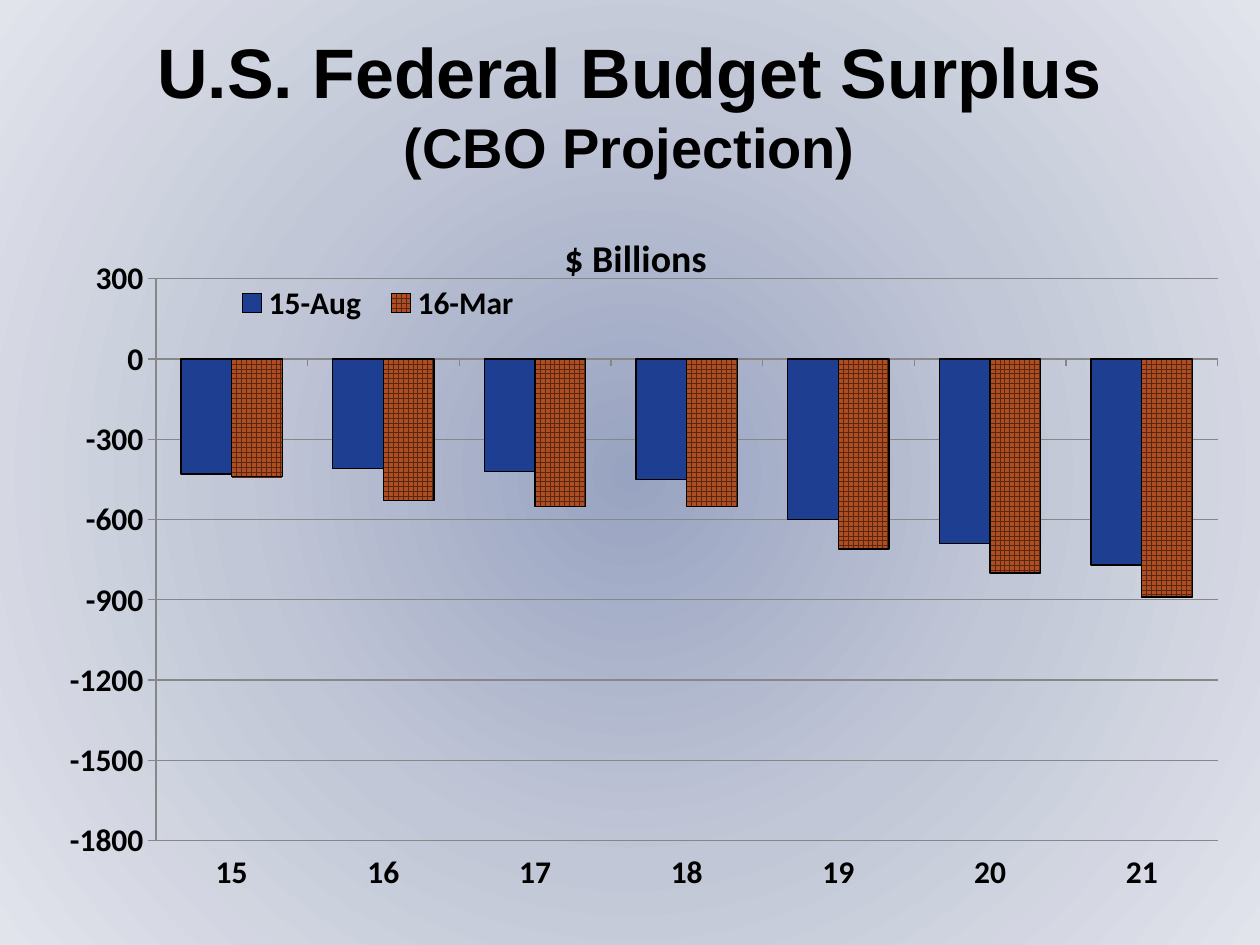
from dataclasses import dataclass

from lxml.etree import SubElement
from pptx import Presentation
from pptx.chart.data import CategoryChartData
from pptx.dml.color import RGBColor
from pptx.enum.chart import XL_CHART_TYPE, XL_LEGEND_POSITION, XL_TICK_LABEL_POSITION, XL_TICK_MARK
from pptx.enum.dml import MSO_PATTERN
from pptx.enum.text import MSO_ANCHOR, MSO_AUTO_SIZE, PP_ALIGN
from pptx.oxml import parse_xml
from pptx.oxml.ns import nsdecls, qn
from pptx.util import Inches, Pt

HUES = {
    "ink": "000000", "axis": "878787", "blue": "1E3E92",
    "rust": "AE4E22", "grid": "572711",
    "core": "98A3C1", "mid": "C2C7D7", "rim": "E1E4EB",
}


@dataclass
class Line:
    text: str
    size: int


@dataclass
class Series:
    name: str
    values: tuple
    hue: str
    mesh: str = ""


LINES = [Line("U.S. Federal Budget Surplus", 40), Line("(CBO Projection)", 32)]
YEARS = [str(year) for year in range(15, 22)]
SERIES = [
    Series("15-Aug", (-430, -410, -420, -450, -600, -690, -770), "blue"),
    Series("16-Mar", (-440, -530, -550, -550, -710, -800, -890), "rust", "grid"),
]


def tint(name: str) -> RGBColor:
    return RGBColor.from_string(HUES[name])


def style(font, size: float, face: str) -> None:
    font.size, font.name, font.bold = Pt(size), face, True
    font.color.rgb = tint("ink")


def backdrop(slide) -> None:
    fill = slide.background.fill
    fill.gradient()
    stops = "".join(
        f'<a:gs pos="{pos}"><a:srgbClr val="{HUES[name]}"/></a:gs>'
        for pos, name in ((0, "core"), (50000, "mid"), (100000, "rim"))
    )
    glow = parse_xml(
        f'<a:gradFill {nsdecls("a")} rotWithShape="1"><a:gsLst>{stops}</a:gsLst>'
        '<a:path path="circle"><a:fillToRect l="50000" t="50000" r="50000" b="50000"/>'
        "</a:path></a:gradFill>"
    )
    old = next(slide.element.iter(qn("a:gradFill")))
    old.getparent().replace(old, glow)


def heading(title, lines: list[Line]) -> None:
    title.left, title.top = Inches(0.25), Inches(0.33)
    title.width, title.height = Inches(9.49), Inches(1)
    frame = title.text_frame
    frame.word_wrap, frame.auto_size = True, MSO_AUTO_SIZE.NONE
    frame.vertical_anchor = MSO_ANCHOR.MIDDLE
    for index, line in enumerate(lines):
        para = frame.add_paragraph() if index else frame.paragraphs[0]
        para.alignment = PP_ALIGN.CENTER
        run = para.add_run()
        run.text = line.text
        style(run.font, line.size, "Arial")


def place(owner, after: str, inner: bool = False, **spots: float) -> None:
    for old in owner.findall(qn("c:layout")):
        owner.remove(old)
    layout = parse_xml(f'<c:layout {nsdecls("c")}><c:manualLayout/></c:layout>')
    manual = layout[0]
    if inner:
        SubElement(manual, qn("c:layoutTarget")).set("val", "inner")
    for key in ("x", "y"):
        SubElement(manual, qn(f"c:{key}Mode")).set("val", "edge")
    for key, value in spots.items():
        SubElement(manual, qn(f"c:{key}")).set("val", str(value))
    if after:
        owner.find(qn(after)).addnext(layout)
    else:
        owner.insert(0, layout)


def paint(bars, item: Series) -> None:
    fill = bars.format.fill
    if item.mesh:
        fill.patterned()
        fill.pattern = MSO_PATTERN.LARGE_GRID
        fill.fore_color.rgb = tint(item.mesh)
        fill.back_color.rgb = tint(item.hue)
    else:
        fill.solid()
        fill.fore_color.rgb = tint(item.hue)
    bars.invert_if_negative = False
    bars.format.line.color.rgb = tint("ink")
    bars.format.line.width = Pt(0.75)


def graph(slide, items: list[Series]) -> None:
    data = CategoryChartData(number_format="0")
    data.categories = YEARS
    for item in items:
        data.add_series(item.name, item.values)
    chart = slide.shapes.add_chart(
        XL_CHART_TYPE.COLUMN_CLUSTERED,
        Inches(0.25), Inches(1.5), Inches(9.49), Inches(5.66), data,
    ).chart
    style(chart.font, 18, "Calibri")

    run = chart.chart_title.text_frame.paragraphs[0].add_run()
    run.text = "$ Billions"
    style(run.font, 21.6, "Calibri")
    chart.chart_title.include_in_layout = False
    place(chart.chart_title._element, "c:tx", x=0.44, y=0.05)

    chart.has_legend = True
    chart.legend.position = XL_LEGEND_POSITION.TOP
    chart.legend.include_in_layout = False
    place(chart.legend._element, "c:legendPos", x=0.16, y=0.13, w=0.26, h=0.06)

    plot = chart.plots[0]
    plot.gap_width, plot.overlap, plot.vary_by_categories = 100, 0, False
    area = plot._element.getparent()
    place(area, "", True, x=0.104, y=0.126, w=0.888, h=0.788)
    for bars, item in zip(plot.series, items):
        paint(bars, item)

    scale, base = chart.value_axis, chart.category_axis
    scale.minimum_scale, scale.maximum_scale, scale.major_unit = -1800, 300, 300
    scale.has_major_gridlines = True
    scale.tick_labels.number_format = "0"
    scale.tick_labels.number_format_is_linked = False
    base.tick_label_position = XL_TICK_LABEL_POSITION.LOW
    scale.major_gridlines.format.line.color.rgb = tint("axis")
    for axis in (scale, base):
        axis.major_tick_mark = XL_TICK_MARK.OUTSIDE
        axis.minor_tick_mark = XL_TICK_MARK.NONE
        axis.format.line.color.rgb = tint("axis")


def main() -> None:
    deck = Presentation()
    deck.slide_width, deck.slide_height = Inches(10), Inches(7.5)
    slide = deck.slides.add_slide(deck.slide_layouts[5])
    backdrop(slide)
    heading(slide.shapes.title, LINES)
    graph(slide, SERIES)
    deck.save("out.pptx")


if __name__ == "__main__":
    main()
